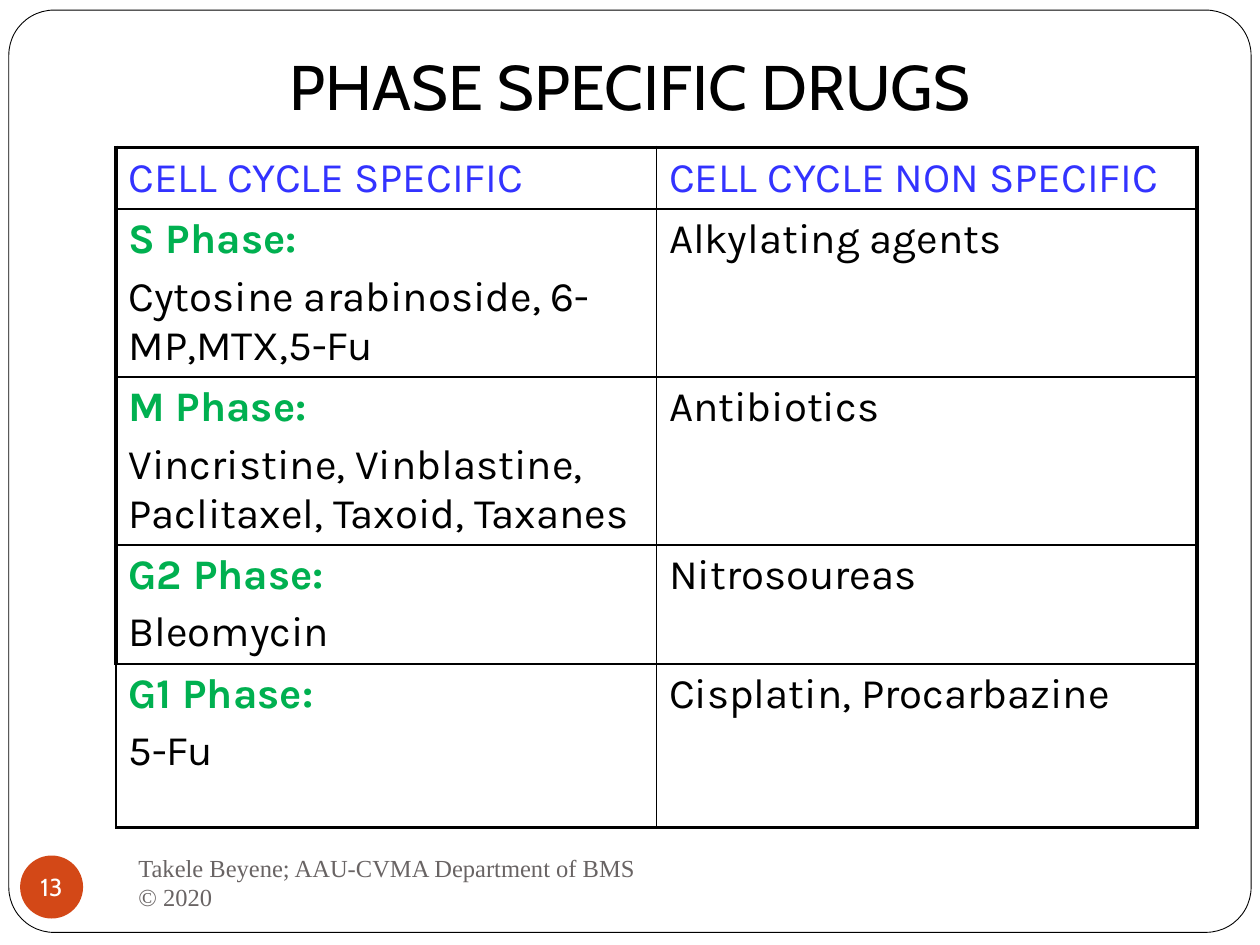
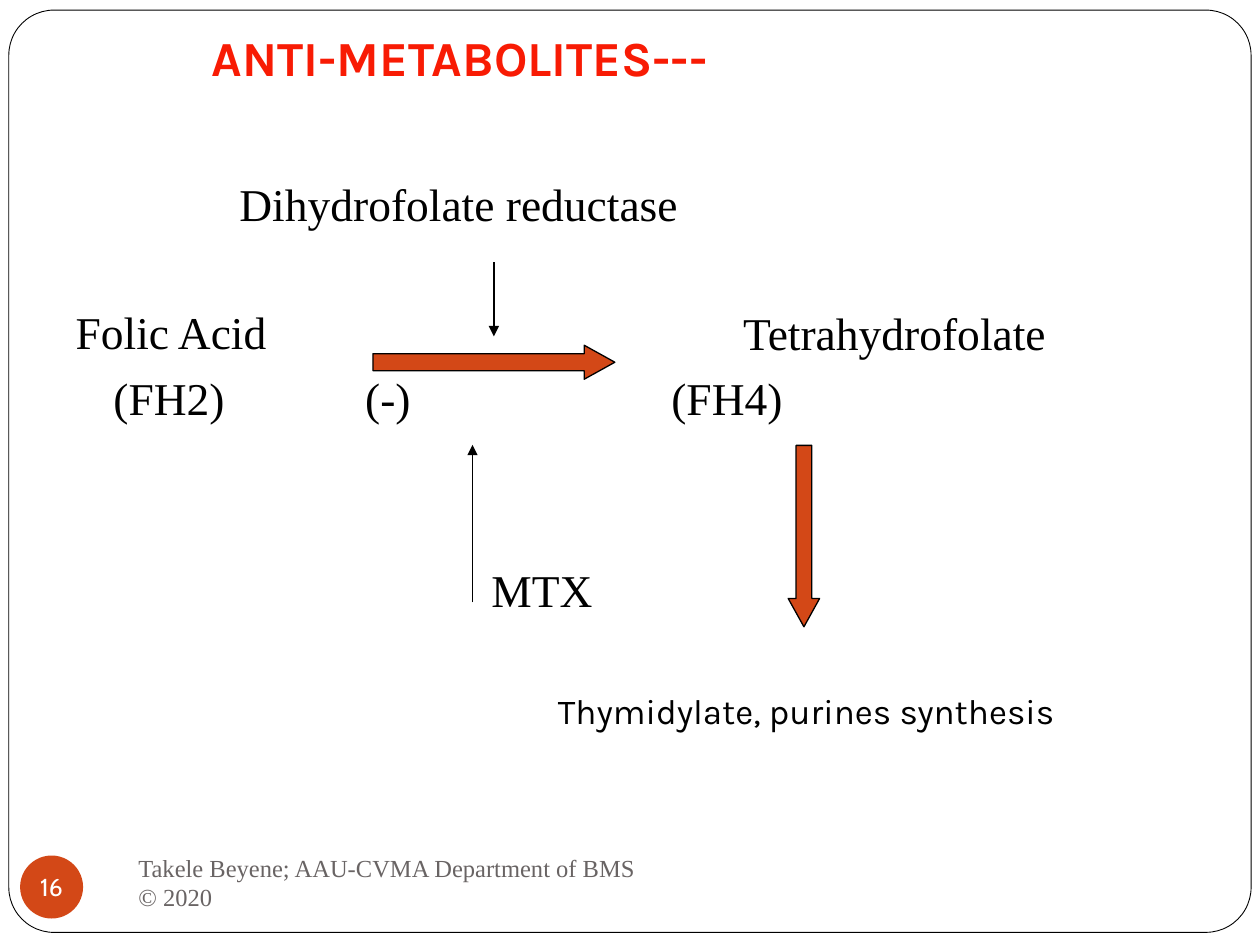
from dataclasses import dataclass

from lxml.etree import SubElement
from pptx import Presentation
from pptx.dml.color import RGBColor
from pptx.enum.shapes import MSO_CONNECTOR, MSO_SHAPE
from pptx.enum.text import MSO_ANCHOR as Anchor, MSO_AUTO_SIZE as AutoSize, PP_ALIGN as Align
from pptx.oxml.ns import qn
from pptx.util import Pt

# Shared scale, colours and fonts
PX = 9144  # 100 px to the inch
BLACK, WHITE = "000000", "FFFFFF"
ORANGE, GREY, RED = "D34817", "696464", "F81B04"
BLUE, GREEN = "3333FF", "00B050"
CABIN, KARLA, TIMES = "Cabin", "Karla", "Times New Roman"
FOOTER = "Takele Beyene; AAU-CVMA Department of BMS © 2020"
THICK, THIN = 2.25, 1


@dataclass(frozen=True)
class Box:
    left: int
    top: int
    width: int
    height: int

    def emu(self) -> tuple:
        return tuple(px(n) for n in (self.left, self.top, self.width, self.height))


@dataclass(frozen=True)
class Style:
    size: int
    font: str
    color: str = BLACK
    bold: bool = False


@dataclass(frozen=True)
class DrugRow:
    phase: str
    specific: str
    nonspecific: str
    height: int


@dataclass(frozen=True)
class PathwayLine:
    text: str
    indent: int
    space_before: int


@dataclass(frozen=True)
class Label:
    text: str
    box: Box
    style: Style


@dataclass(frozen=True)
class BlockArrow:
    box: Box
    rotation: int


@dataclass(frozen=True)
class ThinArrow:
    x: int
    start: int
    end: int


PATHWAY_STYLE = Style(26, TIMES)
DRUG_ROWS = [
    DrugRow("S Phase:", "Cytosine arabinoside, 6-MP,MTX,5-Fu", "Alkylating agents", 123),
    DrugRow("M Phase:", "Vincristine, Vinblastine, Paclitaxel, Taxoid, Taxanes", "Antibiotics", 123),
    DrugRow("G2 Phase:", "Bleomycin", "Nitrosoureas", 87),
    DrugRow("G1 Phase:", "5-Fu", "Cisplatin, Procarbazine", 130),
]
PATHWAY_LINES = [
    PathwayLine("Dihydrofolate reductase", 130, 0),
    PathwayLine("Folic Acid", 0, 42),
    PathwayLine("(FH2)", 30, 6),
    PathwayLine("MTX", 330, 79),
]
LABELS = [
    Label("Tetrahydrofolate", Box(580, 237, 300, 52), PATHWAY_STYLE),
    Label("(-)", Box(280, 289, 80, 52), PATHWAY_STYLE),
    Label("(FH4)", Box(523, 289, 130, 52), PATHWAY_STYLE),
    Label("Thymidylate, purines synthesis", Box(433, 542, 433, 44), Style(20, KARLA)),
]
BLOCK_ARROWS = [
    BlockArrow(Box(296, 274, 192, 27), 0),
    BlockArrow(Box(566, 413, 144, 25), 90),
]
THIN_ARROWS = [ThinArrow(375, 478, 353), ThinArrow(392, 208, 267)]


def px(length: int) -> int:
    return length * PX


def rgb(color: str) -> RGBColor:
    return RGBColor.from_string(color)


def format_paragraph(paragraph, style: Style, align=Align.LEFT, space_before: float = 0) -> None:
    paragraph.alignment = align
    paragraph.space_before = Pt(space_before)
    for run in paragraph.runs:
        run.font.size = Pt(style.size)
        run.font.name = style.font
        run.font.bold = style.bold
        run.font.color.rgb = rgb(style.color)


def set_text(shape, text: str, style: Style, align=Align.LEFT, anchor=Anchor.TOP, wrap=True) -> None:
    frame = shape.text_frame
    frame.text = text
    frame.auto_size = AutoSize.NONE
    frame.word_wrap = wrap
    frame.vertical_anchor = anchor
    format_paragraph(frame.paragraphs[0], style, align)


def set_margins(frame, left: int, top: int, right: int, bottom: int) -> None:
    frame.margin_left, frame.margin_top = px(left), px(top)
    frame.margin_right, frame.margin_bottom = px(right), px(bottom)


def place(shape, box: Box) -> None:
    shape.left, shape.top, shape.width, shape.height = box.emu()


def add_preset(slide, kind, box: Box, fill: str, line_width: float = 0):
    shape = slide.shapes.add_shape(kind, *box.emu())
    shape.shadow.inherit = False
    shape.fill.solid()
    shape.fill.fore_color.rgb = rgb(fill)
    if line_width:
        shape.line.color.rgb = rgb(BLACK)
        shape.line.width = Pt(line_width)
    else:
        shape.line.fill.background()
    return shape


def add_label(slide, label: Label, anchor=Anchor.TOP) -> None:
    textbox = slide.shapes.add_textbox(*label.box.emu())
    set_text(textbox, label.text, label.style, anchor=anchor)


def add_base_slide(presentation, layout: int, number: int):
    """Add a slide with the rounded frame, footer and number badge."""
    slide = presentation.slides.add_slide(presentation.slide_layouts[layout])
    frame = add_preset(slide, MSO_SHAPE.ROUNDED_RECTANGLE, Box(7, 8, 986, 732), WHITE, 0.5)
    frame.adjustments[0] = 0.049
    frame.element.getparent().insert(2, frame.element)  # behind the placeholders
    add_label(slide, Label(FOOTER, Box(100, 675, 433, 50), Style(14, TIMES, GREY)), Anchor.MIDDLE)
    badge = add_preset(slide, MSO_SHAPE.OVAL, Box(16, 679, 50, 50), ORANGE)
    set_margins(badge.text_frame, 0, 0, 0, 0)
    set_text(badge, str(number), Style(14, CABIN, WHITE), Align.CENTER, Anchor.MIDDLE, wrap=False)
    return slide


# Drug table
def set_borders(cell, widths: dict) -> None:
    properties = cell._tc.get_or_add_tcPr()
    for position, (side, width) in enumerate(widths.items()):
        line = SubElement(properties, qn(f"a:ln{side}"), w=str(Pt(width)))
        fill = SubElement(line, qn("a:solidFill"))
        SubElement(fill, qn("a:srgbClr"), val=BLACK)
        properties.insert(position, line)


def fill_cell(cell, lines: list) -> None:
    cell.fill.background()
    cell.text_frame.text = "\n".join(text for text, _ in lines)
    for paragraph, (_, style) in zip(cell.text_frame.paragraphs, lines):
        format_paragraph(paragraph, style, space_before=4.8)


def add_drug_table(slide) -> None:
    header, phase, plain = Style(24, KARLA, BLUE), Style(24, KARLA, GREEN, True), Style(24, KARLA)
    rows = [([("CELL CYCLE SPECIFIC", header)], [("CELL CYCLE NON SPECIFIC", header)])]
    rows += [([(row.phase, phase), (row.specific, plain)], [(row.nonspecific, plain)])
             for row in DRUG_ROWS]
    heights = [45] + [row.height for row in DRUG_ROWS]
    box = Box(92, 117, 858, 554)
    graphic = slide.shapes.add_table(len(rows), 2, *box.emu())
    table = graphic.table
    table.first_row = table.horz_banding = False
    last = len(rows) - 1
    for r, (cells, height) in enumerate(zip(rows, heights)):
        table.rows[r].height = px(height)
        for c, lines in enumerate(cells):
            cell = table.cell(r, c)
            fill_cell(cell, lines)
            set_borders(cell, {
                "L": THICK if c == 0 and r < last else THIN,
                "R": THICK if c == 1 else THIN,
                "T": THICK if r == 0 else THIN,
                "B": THICK if r == last else THIN,
            })
    place(graphic, box)


# Folate pathway
def fill_pathway(body) -> None:
    place(body, Box(50, 83, 900, 583))
    frame = body.text_frame
    frame.text = "\n".join(line.text for line in PATHWAY_LINES)
    frame.auto_size = AutoSize.NONE
    frame.vertical_anchor = Anchor.TOP
    set_margins(frame, 10, 57, 10, 5)
    for paragraph, line in zip(frame.paragraphs, PATHWAY_LINES):
        format_paragraph(paragraph, PATHWAY_STYLE, space_before=line.space_before)
        properties = paragraph._p.get_or_add_pPr()
        properties.set("marL", str(px(line.indent)))
        properties.set("indent", "0")
        SubElement(properties, qn("a:buNone"))


def add_block_arrow(slide, arrow: BlockArrow) -> None:
    shape = add_preset(slide, MSO_SHAPE.RIGHT_ARROW, arrow.box, ORANGE, 0.75)
    shape.adjustments[0], shape.adjustments[1] = 0.5, 0.902
    shape.rotation = arrow.rotation


def add_thin_arrow(slide, arrow: ThinArrow) -> None:
    connector = slide.shapes.add_connector(
        MSO_CONNECTOR.STRAIGHT, px(arrow.x), px(arrow.start), px(arrow.x), px(arrow.end))
    connector.line.color.rgb = rgb(BLACK)
    connector.line.width = Pt(0.75)
    SubElement(connector.line._get_or_add_ln(), qn("a:tailEnd"), type="triangle")
    SubElement(connector.element.spPr, qn("a:effectLst"))


def build_drugs_slide(presentation) -> None:
    slide = add_base_slide(presentation, 5, 13)
    title = slide.shapes.title
    place(title, Box(50, 30, 900, 78))
    set_margins(title.text_frame, 10, 5, 10, 10)
    set_text(title, "PHASE SPECIFIC DRUGS", Style(36, CABIN), Align.CENTER, Anchor.BOTTOM)
    add_drug_table(slide)


def build_pathway_slide(presentation) -> None:
    slide = add_base_slide(presentation, 1, 16)
    title = slide.shapes.title
    place(title, Box(158, 17, 470, 57))
    set_text(title, "ANTI-METABOLITES---", Style(28, KARLA, RED, True))
    fill_pathway(slide.placeholders[1])
    for label in LABELS:
        add_label(slide, label)
    for arrow in BLOCK_ARROWS:
        add_block_arrow(slide, arrow)
    for arrow in THIN_ARROWS:
        add_thin_arrow(slide, arrow)


def main() -> None:
    presentation = Presentation()
    presentation.slide_width, presentation.slide_height = px(1000), px(750)
    build_drugs_slide(presentation)
    build_pathway_slide(presentation)
    presentation.save("out.pptx")


if __name__ == "__main__":
    main()
